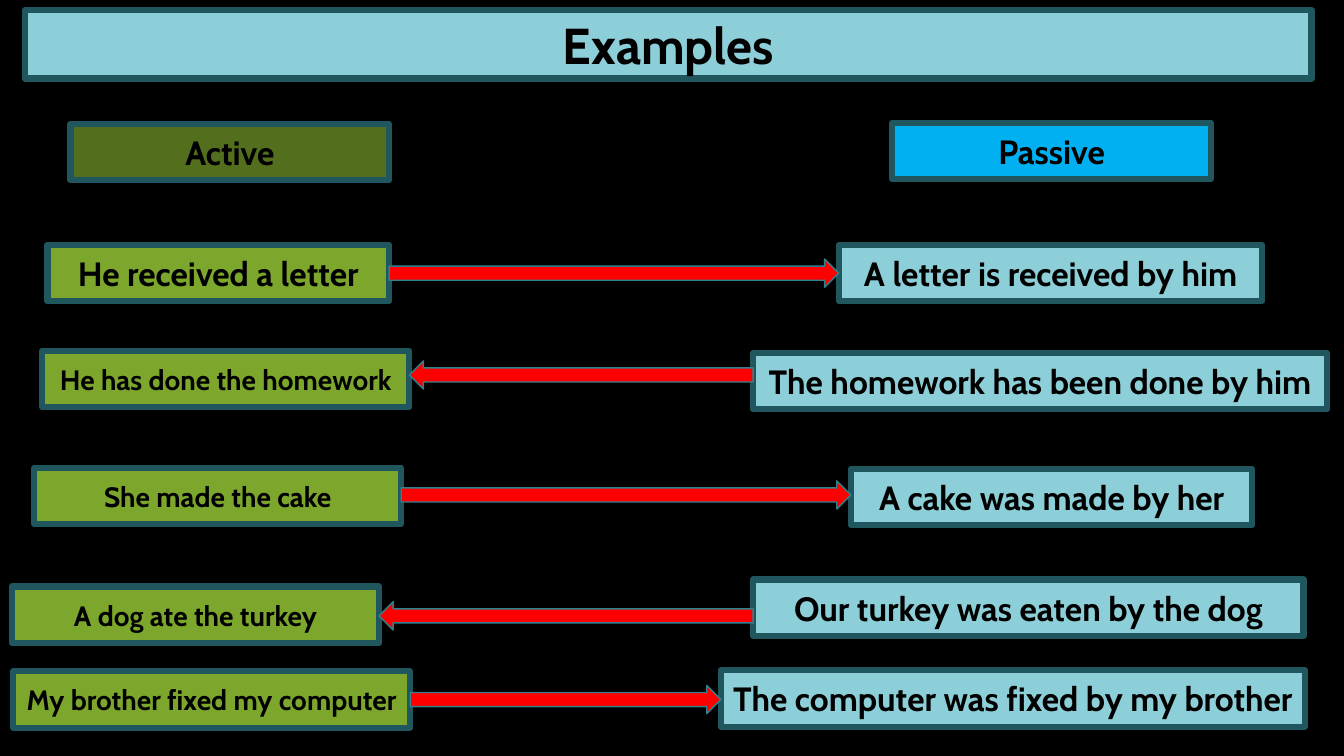
from pptx import Presentation
from pptx.dml.color import RGBColor
from pptx.enum.shapes import MSO_SHAPE
from pptx.enum.text import MSO_ANCHOR, PP_ALIGN
from pptx.util import Inches, Pt

RECTANGLE = MSO_SHAPE.RECTANGLE
LEFT_ARROW = MSO_SHAPE.LEFT_ARROW
RIGHT_ARROW = MSO_SHAPE.RIGHT_ARROW
MIDDLE = MSO_ANCHOR.MIDDLE
CENTER = PP_ALIGN.CENTER

BLACK = RGBColor(0x00, 0x00, 0x00)
AQUA = RGBColor(0x8D, 0xCF, 0xD8)
GREEN = RGBColor(0x7D, 0xA6, 0x2C)
DARK_GREEN = RGBColor(0x53, 0x6F, 0x1D)
BLUE = RGBColor(0x00, 0xB0, 0xF0)
RED = RGBColor(0xFF, 0x00, 0x00)
BOX_EDGE = RGBColor(0x20, 0x57, 0x5E)
ARROW_EDGE = RGBColor(0x30, 0x81, 0x8C)

BOX_HEIGHT = 0.56
ARROW_HEIGHT = 0.28

SENTENCE_PAIRS = [
    (("He received a letter", 0.47, 2.43, 3.39, 24),
     ("A letter is received by him", 8.32, 2.43, 4.2), RIGHT_ARROW, 2.57),
    (("He has done the homework", 0.42, 3.48, 3.64, 20),
     ("The homework has been done by him", 7.47, 3.5, 5.69), LEFT_ARROW, 3.58),
    (("She made the cake", 0.34, 4.64, 3.64, 20),
     ("A cake was made by her", 8.44, 4.65, 3.98), RIGHT_ARROW, 4.77),
    (("A dog ate the turkey", 0.12, 5.82, 3.64, 20),
     ("Our turkey was eaten by the dog", 7.47, 5.75, 5.46), LEFT_ARROW, 5.97),
    (("My brother fixed my computer", 0.13, 6.66, 3.94, 20),
     ("The computer was fixed by my brother", 7.15, 6.65, 5.79), RIGHT_ARROW, 6.8),
]


def write_text(frame, text, size=24, color=BLACK, font="Cabin", bold=True):
    frame.word_wrap = True
    frame.vertical_anchor = MIDDLE
    paragraph = frame.paragraphs[0]
    paragraph.alignment = CENTER
    run = paragraph.add_run()
    run.text = text
    run.font.name = font
    run.font.size = Pt(size)
    run.font.bold = bold
    run.font.color.rgb = color


class ExamplesSlide:
    def __init__(self, slide):
        self.slide = slide
        slide.background.fill.solid()
        slide.background.fill.fore_color.rgb = BLACK

    def outline(self, kind, left, top, width, height, fill, edge, edge_width):
        shape = self.slide.shapes.add_shape(
            kind, Inches(left), Inches(top), Inches(width), Inches(height))
        shape.shadow.inherit = False
        shape.fill.solid()
        shape.fill.fore_color.rgb = fill
        shape.line.color.rgb = edge
        shape.line.width = Pt(edge_width)
        return shape

    def box(self, text, left, top, width, size=24, fill=AQUA, height=BOX_HEIGHT):
        shape = self.outline(RECTANGLE, left, top, width, height, fill, BOX_EDGE, 4.5)
        write_text(shape.text_frame, text, size=size)

    def arrow(self, kind, start, end, top):
        self.outline(kind, start, top, end - start, ARROW_HEIGHT, RED, ARROW_EDGE, 1)


def main():
    presentation = Presentation()
    presentation.slide_width = Inches(13.33)
    presentation.slide_height = Inches(7.5)
    examples = ExamplesSlide(presentation.slides.add_slide(presentation.slide_layouts[6]))

    examples.box("Examples", 0.25, 0.1, 12.76, size=36, height=0.68)
    examples.box("Active", 0.7, 1.23, 3.16, fill=DARK_GREEN)
    examples.box("Passive", 8.85, 1.22, 3.16, fill=BLUE)

    for active, passive, direction, arrow_top in SENTENCE_PAIRS:
        examples.box(*active, fill=GREEN)
        examples.box(*passive)
        active_right = active[1] + active[3]
        passive_left = passive[1]
        examples.arrow(direction, active_right, passive_left, arrow_top)

    presentation.save("out.pptx")


if __name__ == "__main__":
    main()
